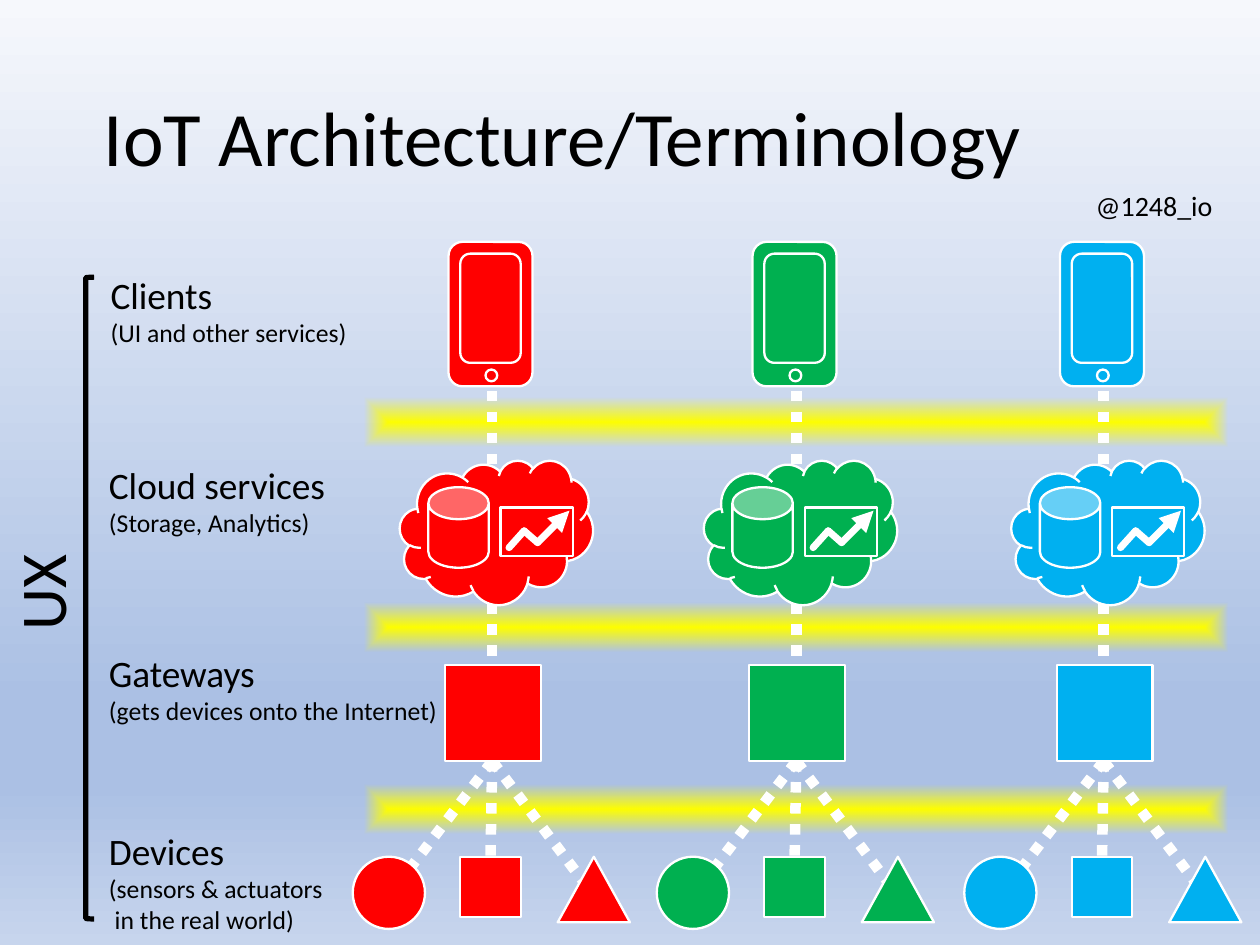
"""Build the IoT architecture slide."""
from copy import deepcopy

from pptx import Presentation
from pptx import util as u
from pptx.dml.color import RGBColor
from pptx.enum import dml, shapes, text
from pptx.oxml import parse_xml
from pptx.oxml.ns import nsdecls, qn

BLACK = RGBColor(0x00, 0x00, 0x00)
WHITE = RGBColor(0xFF, 0xFF, 0xFF)
RED = RGBColor(0xFF, 0x00, 0x00)
GREEN = RGBColor(0x00, 0xB0, 0x50)
BLUE = RGBColor(0x00, 0xB0, 0xF0)
YELLOW = RGBColor(0xFF, 0xFF, 0x00)
SKY_TOP = RGBColor(0xF6, 0xF8, 0xFC)
SKY_DEEP = RGBColor(0xAB, 0xC0, 0xE4)
SKY_BASE = RGBColor(0xC7, 0xD5, 0xED)

SHAPE = shapes.MSO_SHAPE
SLIDE_WIDTH = u.Inches(7.5)
SLIDE_HEIGHT = SLIDE_WIDTH * 3 // 4
SKY_STOPS = [(0, SKY_TOP, 100), (74, SKY_DEEP, 100), (83, SKY_DEEP, 100), (100, SKY_BASE, 100)]
GLOW_STOPS = [(0, YELLOW, 100), (100, YELLOW, 0)]
DOWNWARD = '<a:lin ang="5400000" scaled="0"/>'
FROM_CENTRE = '<a:path path="shape"><a:fillToRect l="50000" t="50000" r="50000" b="50000"/></a:path>'

COLUMNS = [(0, RED), (1.81, GREEN), (3.64, BLUE)]
BAND_TOPS = [2.37, 3.59, 4.67]
LINKS = [
    (2.93, 1.95, 2.93, 3.17),
    (2.93, 3.09, 2.93, 4.32),
    (2.93, 4.53, 2.34, 5.3),
    (2.93, 4.53, 2.92, 5.1),
    (2.93, 4.53, 3.55, 5.35),
]
COLUMN_SHAPES = [
    (SHAPE.OVAL, 2.1, 5.1, 0.43, 0.43),
    (SHAPE.ISOSCELES_TRIANGLE, 3.32, 5.1, 0.43, 0.39),
    (SHAPE.RECTANGLE, 2.74, 5.1, 0.36, 0.36),
    (SHAPE.RECTANGLE, 2.65, 3.96, 0.57, 0.57),
    (SHAPE.CLOUD, 2.38, 2.74, 1.15, 0.86),
    (SHAPE.CAN, 2.55, 2.9, 0.36, 0.48),
    (SHAPE.RECTANGLE, 2.98, 3.02, 0.43, 0.29),
    (SHAPE.ROUNDED_RECTANGLE, 2.67, 1.44, 0.5, 0.86),
    (SHAPE.ROUNDED_RECTANGLE, 2.74, 1.51, 0.36, 0.65),
    (SHAPE.OVAL, 2.89, 2.2, 0.07, 0.07),
]
TREND_POINTS = [(3.03, 3.26), (3.12, 3.16), (3.2, 3.23), (3.39, 3.04)]
LABELS = [
    (0.56, 1.57, 1.61, 0.56, ["Clients", "(UI and other services)"]),
    (0.55, 2.7, 1.52, 0.57, ["Cloud services", "(Storage, Analytics)"]),
    (0.55, 3.82, 2.17, 0.56, ["Gateways", "(gets devices onto the Internet)"]),
    (0.55, 4.88, 1.49, 0.74, ["Devices", "(sensors & actuators", " in the real world)"]),
]


def set_format(target, values):
    """Set each named value on the target."""
    for name, value in values.items():
        setattr(target, name, value)


def set_gradient(element, stops, direction):
    """Replace the solid fill inside an element by a gradient."""
    stop_list = "".join(
        f'<a:gs pos="{position * 1000}"><a:srgbClr val="{color}">'
        f'<a:alpha val="{opacity * 1000}"/></a:srgbClr></a:gs>'
        for position, color, opacity in stops
    )
    solid = element.find(".//" + qn("a:solidFill"))
    gradient = parse_xml(
        f'<a:gradFill {nsdecls("a")} rotWithShape="1">'
        f"<a:gsLst>{stop_list}</a:gsLst>{direction}</a:gradFill>"
    )
    solid.getparent().replace(solid, gradient)


def add_figure(slide, kind, box, fill=None, line=None, width=1):
    """Add a preset shape with an optional fill and outline."""
    shape = slide.shapes.add_shape(kind, *map(u.Inches, box))
    shape.shadow.inherit = False
    for target, color in ((shape.fill, fill), (shape.line.fill, line)):
        if color is None:
            target.background()
        else:
            target.solid()
            target.fore_color.rgb = color
    if line is not None:
        shape.line.width = u.Pt(width)
    return shape


def add_line(slide, ends, width, dash=None, cap="flat", arrow=False):
    """Add a white straight line, dashed or with an arrowhead if asked."""
    connector = slide.shapes.add_connector(shapes.MSO_CONNECTOR.STRAIGHT, *map(u.Inches, ends))
    connector.line.color.rgb = WHITE
    set_format(connector.line, {"width": u.Pt(width), "dash_style": dash})
    outline = connector.element.spPr.find(qn("a:ln"))
    outline.set("cap", cap)
    if arrow:
        outline.append(parse_xml(f'<a:tailEnd {nsdecls("a")} type="triangle"/>'))
    connector.element.spPr.append(parse_xml(f'<a:effectLst {nsdecls("a")}/>'))


def add_text(slide, box, lines, paragraph_format=None, frame_format=None):
    """Add a text box with one paragraph of lines, each a wording and a size."""
    shape = slide.shapes.add_textbox(*map(u.Inches, box))
    frame = shape.text_frame
    set_format(frame, {"word_wrap": True, **(frame_format or {})})
    paragraph = frame.paragraphs[0]
    set_format(paragraph, paragraph_format or {})
    for index, (wording, size) in enumerate(lines):
        if index:
            paragraph.add_line_break()
            line_break = run._r.getnext()
            line_break.append(deepcopy(run._r.find(qn("a:rPr"))))
        run = paragraph.add_run()
        run.text = wording
        set_format(run.font, {"name": "Calibri", "size": u.Pt(size)})
        run.font.color.rgb = BLACK
    return shape


def add_band(slide, top):
    """Add a glowing yellow band between two layers."""
    band = add_figure(slide, SHAPE.RECTANGLE, (2.17, top, 5.14, 0.29), YELLOW)
    set_gradient(band.element.spPr, GLOW_STOPS, FROM_CENTRE)


def add_column(slide, offset, color):
    """Add one stack of devices, gateway, cloud and phone."""
    for x1, y1, x2, y2 in LINKS:
        ends = (x1 + offset, y1, x2 + offset, y2)
        add_line(slide, ends, 4.5, dml.MSO_LINE.ROUND_DOT)
    for kind, left, top, width, height in COLUMN_SHAPES:
        figure = add_figure(slide, kind, (left + offset, top, width, height), color, WHITE)
        if kind == SHAPE.CAN:
            figure.adjustments[0] = 0.53
    for (x1, y1), (x2, y2) in zip(TREND_POINTS, TREND_POINTS[1:]):
        ends = (x1 + offset, y1, x2 + offset, y2)
        add_line(slide, ends, 3, cap="rnd", arrow=(x2, y2) == TREND_POINTS[-1])


def add_label(slide, left, top, width, height, wording):
    """Add a layer name with its smaller explanation."""
    lines = [(line, 11 if index else 16) for index, line in enumerate(wording)]
    add_text(slide, (left, top, width, height), lines, frame_format={"word_wrap": False})


def main():
    """Build and save the slide."""
    presentation = Presentation()
    set_format(presentation, {"slide_width": SLIDE_WIDTH, "slide_height": SLIDE_HEIGHT})
    slide = presentation.slides.add_slide(presentation.slide_layouts[6])
    background = slide.background.fill
    background.solid()
    background.fore_color.rgb = SKY_TOP
    set_gradient(slide.element, SKY_STOPS, DOWNWARD)

    centred = {"alignment": text.PP_ALIGN.CENTER}
    no_margins = dict.fromkeys(("margin_left", "margin_top", "margin_right", "margin_bottom"), 0)
    add_text(slide, (6.49, 1.12, 0.76, 0.2), [("@1248_io", 12)], centred, no_margins)
    add_text(slide, (0.52, 0.3, 6.47, 1.09), [("IoT Architecture/Terminology", 33)],
             {"line_spacing": 0.9}, {"vertical_anchor": text.MSO_ANCHOR.MIDDLE})
    for top in BAND_TOPS:
        add_band(slide, top)
    for offset, color in COLUMNS:
        add_column(slide, offset, color)
    for label in LABELS:
        add_label(slide, *label)
    experience = add_text(slide, (-0.34, 3.24, 1.17, 0.57), [("UX", 28)], centred)
    experience.rotation = 270
    add_figure(slide, SHAPE.LEFT_BRACKET, (0.51, 1.65, 0.05, 3.82), line=BLACK, width=2.25)
    presentation.save("out.pptx")


if __name__ == "__main__":
    main()
